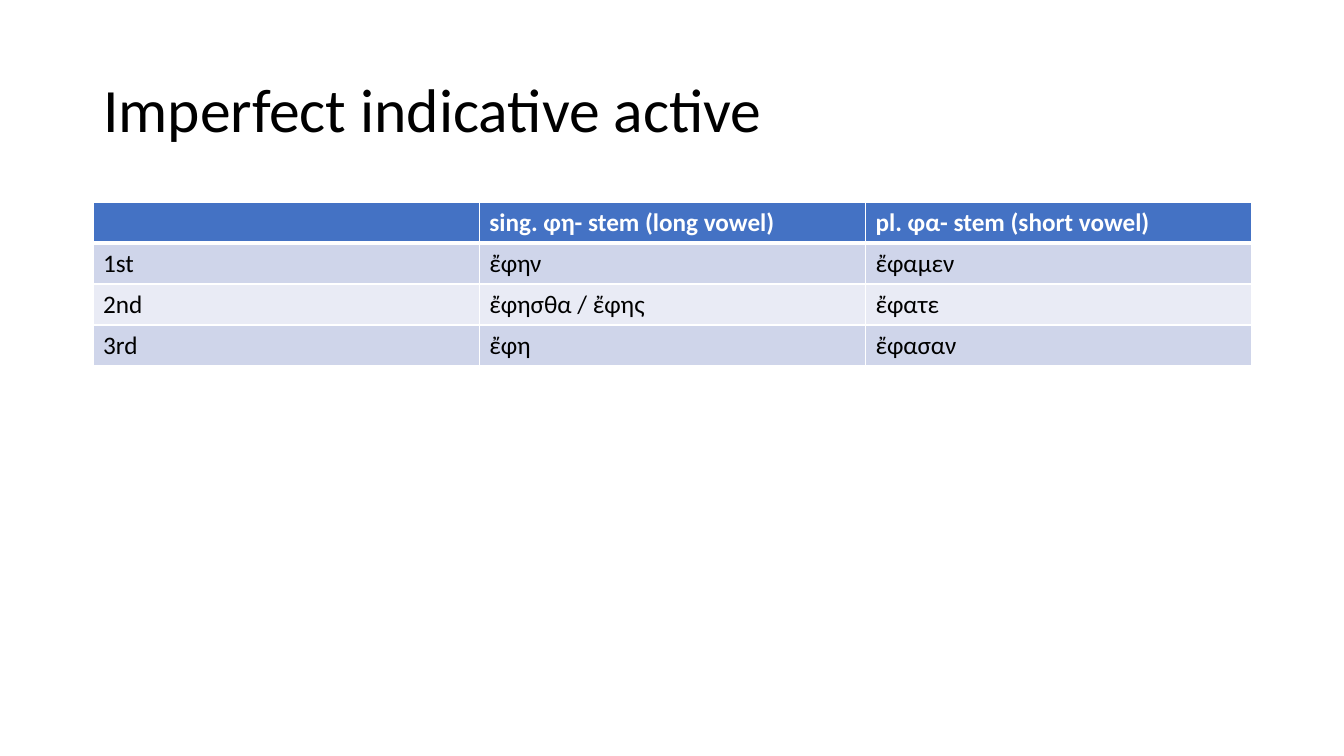
from lxml import etree
from pptx import Presentation
from pptx import util as u
from pptx.dml.color import RGBColor
from pptx.enum import text
from pptx.oxml import ns

PX = 12192000 / 1344
BLACK = RGBColor(0x00, 0x00, 0x00)
WHITE = RGBColor(0xFF, 0xFF, 0xFF)
HEADER_BLUE = RGBColor(0x44, 0x72, 0xC4)
BAND_DARK = RGBColor(0xCF, 0xD5, 0xEA)
BAND_LIGHT = RGBColor(0xE9, 0xEB, 0xF5)

CONJUGATION = [
    ["", "sing. φη- stem (long vowel)", "pl. φα- stem (short vowel)"],
    ["1st", "ἔφην", "ἔφαμεν"],
    ["2nd", "ἔφησθα / ἔφης", "ἔφατε"],
    ["3rd", "ἔφη", "ἔφασαν"],
]


def px(length):
    return u.Emu(round(length * PX))


class GrammarSlide:
    """Style and drawing methods for one slide of verb forms."""

    font_name = "Calibri"

    def __init__(self, deck):
        self.page = deck.slides.add_slide(deck.slide_layouts[5])

    def style(self, para, size, color, bold=False):
        for span in para.runs:
            span.font.name = self.font_name
            span.font.size = u.Pt(size)
            span.font.bold = bold
            span.font.color.rgb = color

    def title(self, words, left, top, width, height):
        box = self.page.shapes.title
        box.left, box.top, box.width, box.height = map(px, (left, top, width, height))
        frame = box.text_frame
        frame.text = words
        frame.word_wrap = True
        frame.auto_size = text.MSO_AUTO_SIZE.NONE
        frame.vertical_anchor = text.MSO_ANCHOR.MIDDLE
        para = frame.paragraphs[0]
        para.alignment = text.PP_ALIGN.LEFT
        para.line_spacing = 0.9
        self.style(para, 44, BLACK)

    def borders(self, cell, widths):
        properties = cell._tc.get_or_add_tcPr()
        for index, (side, points) in enumerate(widths.items()):
            line = etree.Element(ns.qn(f"a:ln{side}"), w=str(u.Pt(points)))
            fill = etree.SubElement(line, ns.qn("a:solidFill"))
            etree.SubElement(fill, ns.qn("a:srgbClr"), val=str(WHITE))
            properties.insert(index, line)

    def table(self, rows, left, top, width, row_height):
        size = len(rows), len(rows[0])
        frame = self.page.shapes.add_table(
            *size, px(left), px(top), px(width), px(row_height * len(rows)))
        for row_index, row in enumerate(rows):
            header = row_index == 0
            band = BAND_DARK if row_index % 2 else BAND_LIGHT
            widths = {"L": 1, "R": 1, "T": 3 if row_index == 1 else 1, "B": 3 if header else 1}
            for column_index, words in enumerate(row):
                cell = frame.table.cell(row_index, column_index)
                cell.text = words
                cell.fill.solid()
                cell.fill.fore_color.rgb = HEADER_BLUE if header else band
                self.borders(cell, widths)
                self.style(cell.text_frame.paragraphs[0], 18, WHITE if header else BLACK, header)


def main():
    deck = Presentation()
    deck.slide_width, deck.slide_height = px(1344), px(756)
    slide = GrammarSlide(deck)
    slide.title("Imperfect indicative active", 93, 40, 1159, 146)
    slide.table(CONJUGATION, 93, 202, 1159, 41)
    deck.save("out.pptx")


if __name__ == "__main__":
    main()
